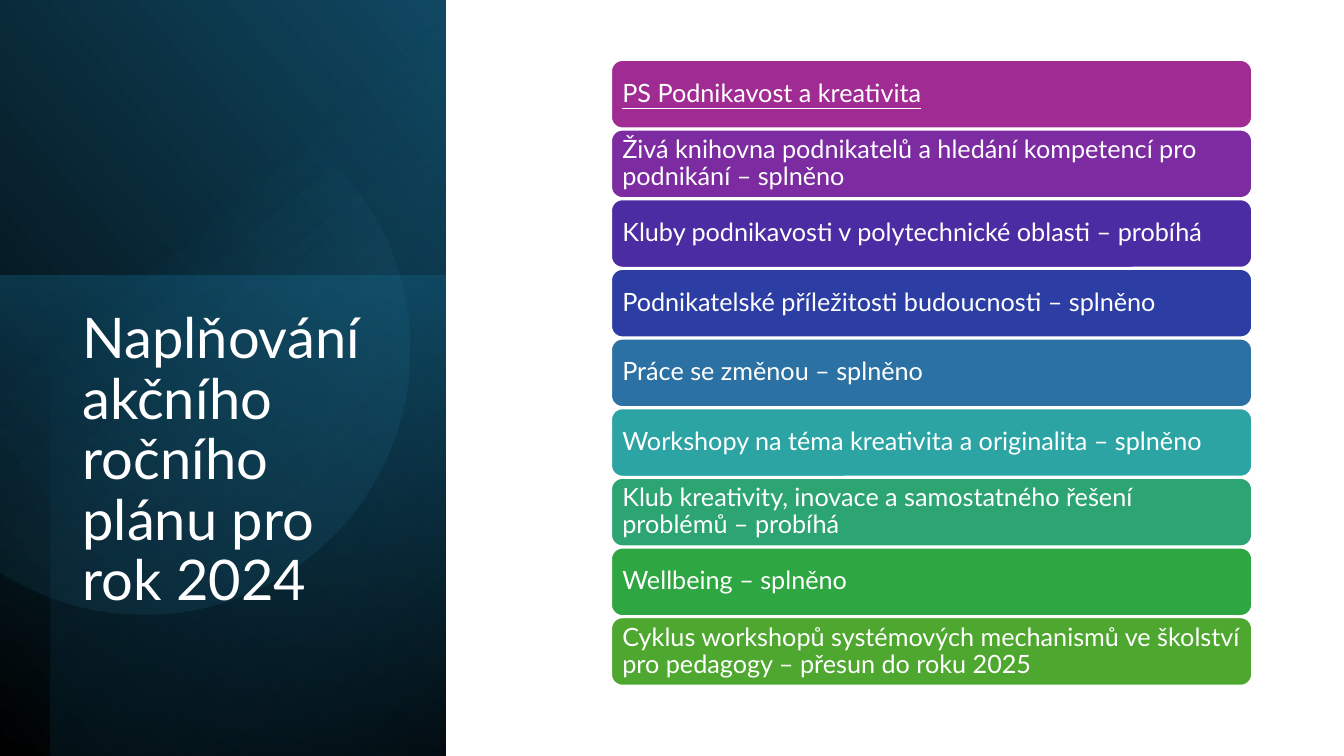
import math

import pptx
import pptx.dml.color
import pptx.enum.shapes
import pptx.enum.text
import pptx.oxml.ns
import pptx.util

RGB = pptx.dml.color.RGBColor
SHAPE = pptx.enum.shapes.MSO_SHAPE
ANCHOR = pptx.enum.text.MSO_ANCHOR
ALIGN = pptx.enum.text.PP_ALIGN
inch = pptx.util.Inches
qn = pptx.oxml.ns.qn

WHITE = RGB(0xFF, 0xFF, 0xFF)
BLACK = RGB(0x00, 0x00, 0x00)
NAVY = RGB(0x10, 0x48, 0x62)
TEAL = RGB(0x15, 0x60, 0x82)
DARK_TEAL = RGB(0x0B, 0x30, 0x41)
SKY = RGB(0x46, 0xB1, 0xE1)
FONT = "Lato"
UNITS = 1000

TITLE = "Naplňování akčního ročního plánu pro rok 2024"
ACTIVITIES = [
    ("PS Podnikavost a kreativita", RGB(0xA0, 0x2B, 0x93)),
    ("Živá knihovna podnikatelů a hledání kompetencí pro podnikání – splněno", RGB(0x7C, 0x2B, 0xA1)),
    ("Kluby podnikavosti v polytechnické oblasti – probíhá", RGB(0x4B, 0x2C, 0xA2)),
    ("Podnikatelské příležitosti budoucnosti – splněno", RGB(0x2C, 0x3E, 0xA3)),
    ("Práce se změnou – splněno", RGB(0x2C, 0x71, 0xA4)),
    ("Workshopy na téma kreativita a originalita – splněno", RGB(0x2D, 0xA4, 0xA4)),
    ("Klub kreativity, inovace a samostatného řešení problémů – probíhá", RGB(0x2D, 0xA5, 0x73)),
    ("Wellbeing – splněno", RGB(0x2E, 0xA6, 0x41)),
    ("Cyklus workshopů systémových mechanismů ve školství pro pedagogy – přesun do roku 2025",
     RGB(0x4E, 0xA7, 0x2E)),
]


def set_gradient(sp, stops, angle):
    """Fill a lineless shape with two (position, colour, opacity) stops; angle is clockwise."""
    sp.shadow.inherit = False
    sp.line.fill.background()
    sp.fill.gradient()
    sp.fill.gradient_angle = 360 - angle
    for stop, (position, color, opacity) in zip(sp.fill.gradient_stops, stops):
        stop.position = position
        stop.color.rgb = color
    colors = sp._element.spPr.findall(".//" + qn("a:srgbClr"))
    for clr, (position, color, opacity) in zip(colors, stops):
        if opacity < 1:
            alpha = clr.makeelement(qn("a:alpha"), {"val": str(round(opacity * 100000))})
            clr.append(alpha)


def add_turned_rect(slide, box, rotation, flip, stops, angle):
    """Add a gradient rectangle turned a quarter so that it covers the given box."""
    x, y, w, h = box
    left, top = x + (w - h) / 2, y + (h - w) / 2
    sp = slide.shapes.add_shape(SHAPE.RECTANGLE, inch(left), inch(top), inch(h), inch(w))
    sp.rotation = rotation
    if flip:
        sp._element.spPr.find(qn("a:xfrm")).set("flipH", "1")
    set_gradient(sp, stops, angle)


def round_segments(sp, angles, radius):
    """Turn the straight segments of a freeform into circular arcs between the angles."""
    lines = sp._element.spPr.findall(".//" + qn("a:lnTo"))
    start = sp._element.spPr.find(".//" + qn("a:moveTo"))[0]
    for line, a, b in zip(lines, angles, angles[1:]):
        end = line[0]
        reach = 4 / 3 * math.tan((b - a) / 4) * radius
        curve = line.makeelement(qn("a:cubicBezTo"), {})
        for pt, angle, length in ((start, a, reach), (end, b, -reach)):
            px = int(pt.get("x")) - length * math.sin(angle)
            py = int(pt.get("y")) + length * math.cos(angle)
            curve.append(line.makeelement(qn("a:pt"), {"x": str(round(px)), "y": str(round(py))}))
        curve.append(end)
        line.getparent().replace(line, curve)
        start = end


def add_cut_disc(slide, box, rotation, stops, angle):
    """Add a disc cut off at the left edge of the box, with its frame turned by rotation."""
    x, y, w, h = box
    center_x, center_y, radius = x + 0.324 * w, y + 0.463 * h, 0.595 * w
    turn = math.radians(rotation)
    pivot_x, pivot_y = x + 0.41 * w, y + 0.473 * h
    dx, dy = center_x - pivot_x, center_y - pivot_y
    local_x = pivot_x + dx * math.cos(turn) + dy * math.sin(turn)
    local_y = pivot_y - dx * math.sin(turn) + dy * math.cos(turn)
    end = math.acos((x - center_x) / radius)
    angles = [-end - turn, -math.pi, -math.pi / 2, 0, end - turn]
    points = [(UNITS * (local_x + radius * math.cos(a)), UNITS * (local_y + radius * math.sin(a)))
              for a in angles]
    builder = slide.shapes.build_freeform(*points[0], scale=inch(1) / UNITS)
    builder.add_line_segments(points[1:])
    sp = builder.convert_to_shape()
    round_segments(sp, angles, radius * UNITS)
    sp.rotation = rotation
    set_gradient(sp, stops, angle)


def write(tf, text, size, underline=None):
    """Write one white left-aligned paragraph into a text frame."""
    tf.word_wrap = True
    tf.text = text
    p = tf.paragraphs[0]
    p.alignment = ALIGN.LEFT
    p.line_spacing = 0.9
    font = p.runs[0].font
    font.name, font.size, font.underline = FONT, pptx.util.Pt(size), underline
    font.color.rgb = WHITE


def add_title_panel(slide, box):
    """Build the dark gradient panel with the title."""
    x, y, w, h = box
    add_turned_rect(slide, box, 90, True, [(0, BLACK, 1), (1, NAVY, 1)], 310)
    lower = (x, y + 0.365 * h, w, 0.635 * h)
    add_turned_rect(slide, lower, 270, False, [(0, TEAL, 0.5), (1, DARK_TEAL, 0)], 190)
    inner = (x + 0.113 * w, y, 0.887 * w, h)
    add_turned_rect(slide, inner, 270, True, [(0, BLACK, 0.59), (0.69, TEAL, 0)], 220)
    add_cut_disc(slide, box, 101.6, [(0.39, SKY, 0), (1, NAVY, 0.26)], 310)
    sp = slide.shapes.add_textbox(inch(x + 0.163 * w), inch(y + 0.404 * h),
                                  inch(0.713 * w), inch(0.448 * h))
    write(sp.text_frame, TITLE, 40)


def add_activity_list(slide, box):
    """Stack the activities as equal rounded bars, the first one underlined as a heading."""
    x, y, w, h = box
    pitch = h / len(ACTIVITIES)
    for row, (text, color) in enumerate(ACTIVITIES):
        sp = slide.shapes.add_shape(SHAPE.ROUNDED_RECTANGLE, inch(x), inch(y + row * pitch),
                                    inch(w), inch(0.985 * pitch))
        sp.shadow.inherit = False
        sp.fill.solid()
        sp.fill.fore_color.rgb = color
        sp.line.color.rgb = WHITE
        sp.line.width = pptx.util.Pt(1.5)
        tf = sp.text_frame
        tf.margin_left, tf.margin_right = inch(0.08), inch(0.06)
        tf.margin_top = tf.margin_bottom = inch(0.07)
        tf.vertical_anchor = ANCHOR.MIDDLE
        write(tf, text, 18, underline=True if row == 0 else None)


def main():
    """Build the slide and save it."""
    prs = pptx.Presentation()
    prs.slide_width, prs.slide_height = inch(13.33), inch(7.5)
    slide = prs.slides.add_slide(prs.slide_layouts[6])
    add_title_panel(slide, (0, 0, 4.42, 7.5))
    add_activity_list(slide, (6.06, 0.594, 6.36, 6.22))
    prs.save("out.pptx")


if __name__ == "__main__":
    main()
